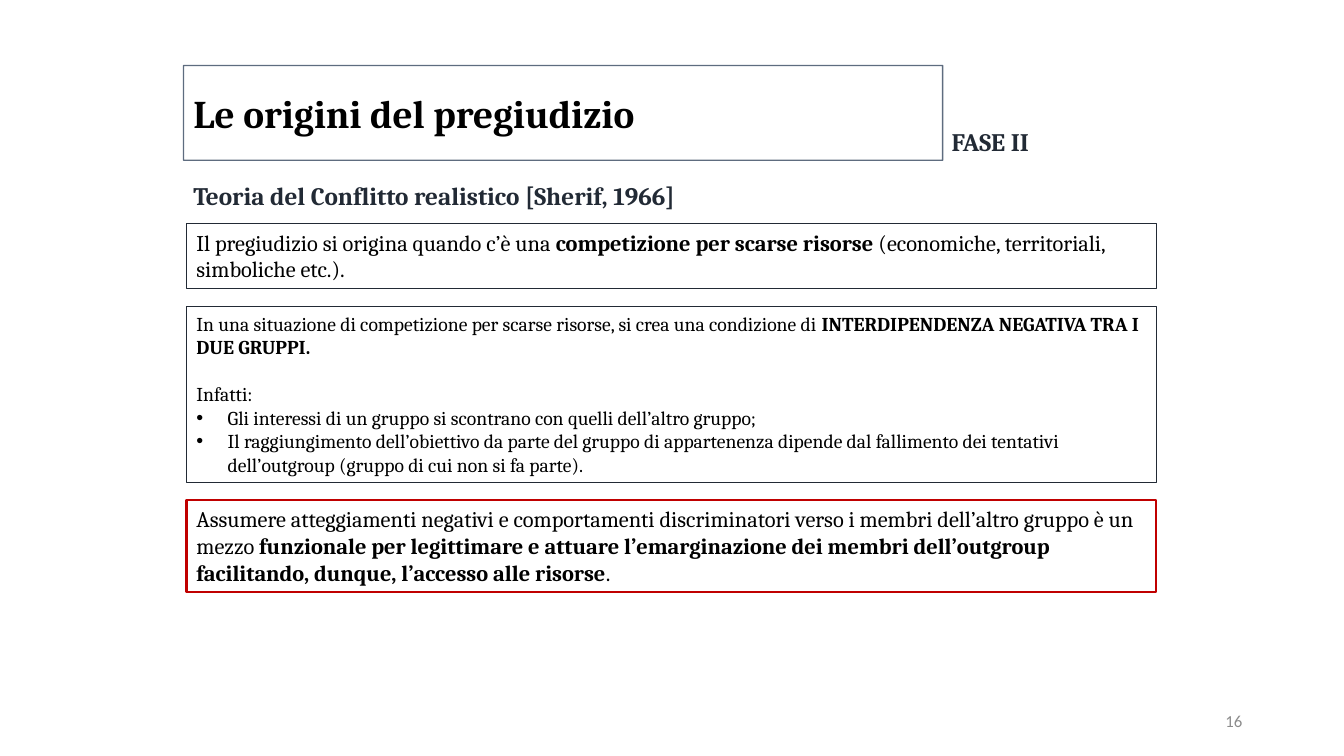
from dataclasses import dataclass

from pptx import Presentation
from pptx import util as u
from pptx.enum import shapes, text
from pptx.dml.color import RGBColor
from pptx.oxml.xmlchemy import OxmlElement

HUES = {"black": "000000", "navy": "222A35", "slate": "44546A",
        "red": "C00000", "gray": "8C8C8C"}
LEFT, WIDE = 1.85, 9.62
INDENT = 0.31
ALIGN = text.PP_ALIGN
ANCHOR = text.MSO_ANCHOR


@dataclass
class Para:
    runs: list[tuple[str, bool]]  # words, bold
    bullet: bool = False
    before: float = 0


@dataclass
class Box:
    left: float
    top: float
    width: float
    height: float
    paras: list[Para]
    size: int
    hue: str = "black"
    face: str = "Cambria"
    edge: str = ""  # no edge: plain text box
    weight: float = 0.75
    alpha: int = 100
    align: ALIGN = ALIGN.LEFT
    anchor: ANCHOR = ANCHOR.TOP


def color(name: str) -> RGBColor:
    return RGBColor.from_string(HUES[name])


def add_bullet(para) -> None:
    props = para._p.get_or_add_pPr()
    props.set("marL", str(u.Inches(INDENT)))
    props.set("indent", str(-u.Inches(INDENT)))
    font = OxmlElement("a:buFont")
    font.set("typeface", "Arial")
    mark = OxmlElement("a:buChar")
    mark.set("char", "•")
    props.extend([font, mark])


def add_edge(shape, box: Box) -> None:
    shape.shadow.inherit = False
    shape.fill.background()
    shape.line.color.rgb = color(box.edge)
    shape.line.width = u.Pt(box.weight)
    if box.alpha < 100:
        alpha = OxmlElement("a:alpha")
        alpha.set("val", str(box.alpha * 1000))
        shape.line.fill._xPr.find(".//{*}srgbClr").append(alpha)


def draw(slide, box: Box) -> None:
    place = [u.Inches(n) for n in (box.left, box.top, box.width, box.height)]
    if box.edge:
        shape = slide.shapes.add_shape(shapes.MSO_SHAPE.RECTANGLE, *place)
        add_edge(shape, box)
    else:
        shape = slide.shapes.add_textbox(*place)
    frame = shape.text_frame
    frame.word_wrap = True
    frame.vertical_anchor = box.anchor
    for i, item in enumerate(box.paras):
        para = frame.add_paragraph() if i else frame.paragraphs[0]
        para.alignment = box.align
        if item.before:
            para.space_before = u.Pt(item.before)
        if item.bullet:
            add_bullet(para)
        for words, bold in item.runs:
            run = para.add_run()
            run.text = words
            run.font.name = box.face
            run.font.size = u.Pt(box.size)
            run.font.bold = bold
            run.font.color.rgb = color(box.hue)


BOXES = [
    # Page number
    Box(9.42, 6.95, 3, 0.4, [Para([("16", False)])], 12, "gray", "Calibri",
        align=ALIGN.RIGHT, anchor=ANCHOR.MIDDLE),
    # Title and headings
    Box(1.82, 0.65, 7.53, 0.94,
        [Para([("Le origini del pregiudizio", True)])], 28,
        edge="slate", weight=1, alpha=86, anchor=ANCHOR.MIDDLE),
    Box(9.34, 1.2, 1.1, 0.4, [Para([("FASE II", True)])], 18, "navy"),
    Box(1.82, 1.74, 6.74, 0.4,
        [Para([("Teoria del Conflitto realistico [Sherif, 1966]", True)])],
        18, "navy"),
    # Origin of prejudice
    Box(LEFT, 2.22, WIDE, 0.64, [Para([
        ("Il pregiudizio si origina quando c’è una ", False),
        ("competizione per scarse risorse ", True),
        ("(economiche, territoriali, simboliche etc.).", False),
    ])], 16, edge="navy"),
    # Negative interdependence
    Box(LEFT, 3.04, WIDE, 1.75, [
        Para([
            ("In una situazione di competizione per scarse risorse, "
             "si crea una condizione di ", False),
            ("INTERDIPENDENZA NEGATIVA TRA I DUE GRUPPI.", True),
        ]),
        Para([("Infatti:", False)], before=17),
        Para([("Gli interessi di un gruppo si scontrano con quelli "
               "dell’altro gruppo;", False)], bullet=True),
        Para([("Il raggiungimento dell’obiettivo da parte del gruppo di "
               "appartenenza dipende dal fallimento dei tentativi "
               "dell’outgroup (gruppo di cui non si fa parte).", False)],
             bullet=True),
    ], 14, edge="navy"),
    # Outcome
    Box(LEFT, 4.96, WIDE, 0.91, [Para([
        ("Assumere atteggiamenti negativi e comportamenti discriminatori "
         "verso i membri dell’altro gruppo è un mezzo ", False),
        ("funzionale per legittimare e attuare l’emarginazione dei membri "
         "dell’outgroup facilitando, dunque, l’accesso alle risorse", True),
        (".", False),
    ])], 16, edge="red", weight=1.5),
]


def main() -> None:
    deck = Presentation()
    deck.slide_width = u.Inches(13.33)
    deck.slide_height = u.Inches(7.5)
    slide = deck.slides.add_slide(deck.slide_layouts[6])
    for box in BOXES:
        draw(slide, box)
    deck.save("out.pptx")


if __name__ == "__main__":
    main()
